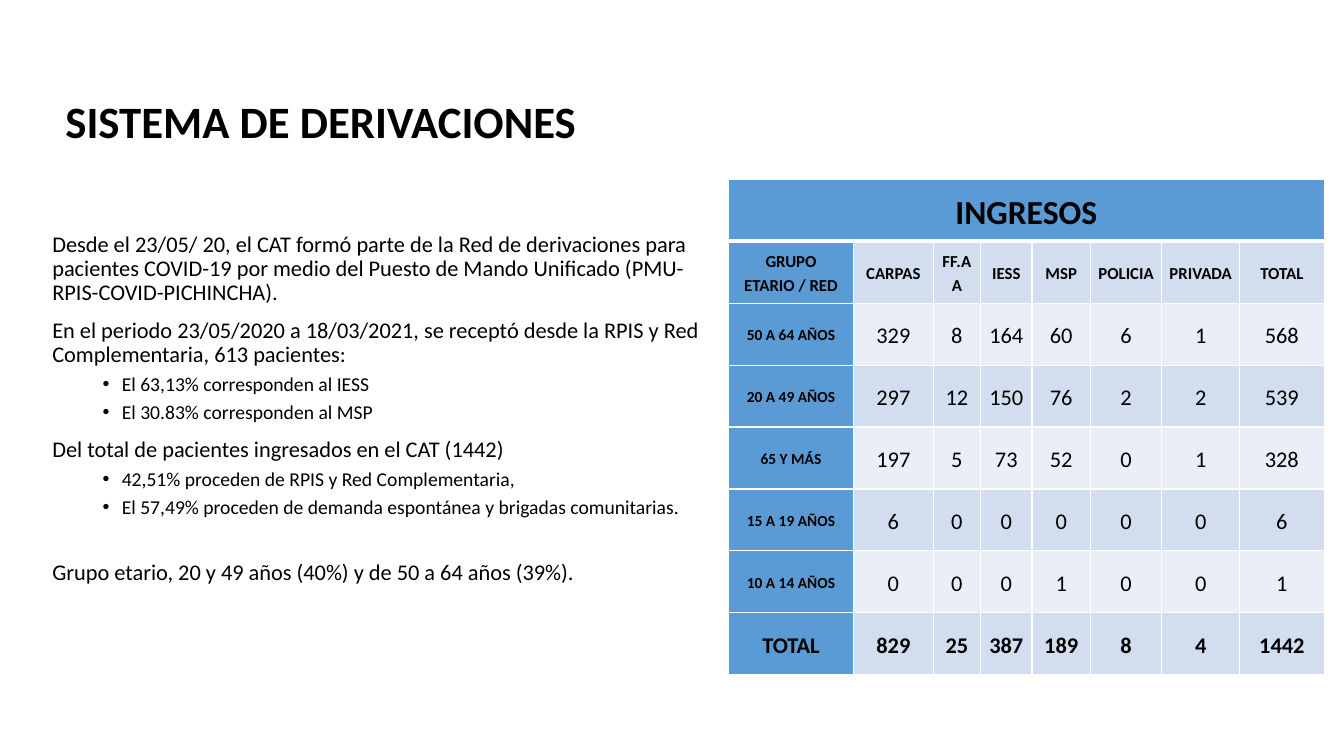
from lxml import etree
from pptx import Presentation
from pptx.dml.color import RGBColor
from pptx.enum.text import MSO_ANCHOR as ANCHOR, PP_ALIGN as ALIGN
from pptx.oxml.ns import qn
from pptx.util import Cm, Pt

BLACK = RGBColor(0x00, 0x00, 0x00)
BLUE = RGBColor(0x5B, 0x9B, 0xD5)
BAND_DARK = RGBColor(0xD2, 0xDE, 0xEF)
BAND_LIGHT = RGBColor(0xEA, 0xEF, 0xF7)
WHITE = RGBColor(0xFF, 0xFF, 0xFF)

TITLE = "SISTEMA DE DERIVACIONES"
BODY = [
    (0, "Desde el 23/05/ 20, el CAT formó parte de la Red de derivaciones para "
        "pacientes COVID-19 por medio del Puesto de Mando Unificado "
        "(PMU-RPIS-COVID-PICHINCHA)."),
    (0, "En el periodo 23/05/2020 a 18/03/2021, se receptó desde la RPIS y Red "
        "Complementaria, 613 pacientes:"),
    (1, "El 63,13% corresponden al IESS"),
    (1, "El 30.83% corresponden al MSP"),
    (0, "Del total de pacientes ingresados en el CAT (1442)"),
    (1, "42,51% proceden de RPIS y Red Complementaria,"),
    (1, "El 57,49% proceden de demanda espontánea y brigadas comunitarias."),
]
CLOSING = "Grupo etario, 20 y 49 años (40%) y de 50 a 64 años (39%)."
COL_WIDTHS = [3.15, 2.01, 1.19, 1.3, 1.47, 1.8, 1.96, 2.13]
ROW_HEIGHT = 1.56
ADMISSIONS = [
    ["INGRESOS"],
    ["GRUPO ETARIO / RED", "CARPAS", "FF.AA", "IESS", "MSP", "POLICIA", "PRIVADA", "TOTAL"],
    ["50 A 64 AÑOS", 329, 8, 164, 60, 6, 1, 568],
    ["20 A 49 AÑOS", 297, 12, 150, 76, 2, 2, 539],
    ["65 Y MÁS", 197, 5, 73, 52, 0, 1, 328],
    ["15 A 19 AÑOS", 6, 0, 0, 0, 0, 0, 6],
    ["10 A 14 AÑOS", 0, 0, 0, 1, 0, 0, 1],
    ["TOTAL", 829, 25, 387, 189, 8, 4, 1442],
]


def write(p, text, size=16, bold=False, align=ALIGN.LEFT, spacing=0.9, before=0):
    p.alignment, p.line_spacing, p.space_before = align, spacing, Pt(before)
    r = p.add_run()
    r.text = text
    r.font.name, r.font.size, r.font.bold = "Calibri", Pt(size), bold
    r.font.color.rgb = BLACK


def add_bullet(p):
    pPr = p._p.get_or_add_pPr()
    pPr.set("marL", str(Cm(1.75)))
    pPr.set("indent", str(Cm(-0.48)))
    etree.SubElement(pPr, qn("a:buFont"), typeface="Arial")
    etree.SubElement(pPr, qn("a:buChar"), char="•")


def add_borders(cell, bottom=1):
    tcPr = cell._tc.get_or_add_tcPr()
    for i, (side, width) in enumerate([("L", 1), ("R", 1), ("T", 1), ("B", bottom)]):
        ln = etree.Element(qn(f"a:ln{side}"), w=str(Pt(width)))
        fill = etree.SubElement(ln, qn("a:solidFill"))
        etree.SubElement(fill, qn("a:srgbClr"), val=str(WHITE))
        tcPr.insert(i, ln)


class Deck:
    """Builds the slide's text and table in one shared style."""

    def __init__(self):
        self.prs = Presentation()
        self.prs.slide_width, self.prs.slide_height = Cm(33.87), Cm(19.05)
        self.s = self.prs.slides.add_slide(self.prs.slide_layouts[6])

    def text_box(self, x, y, w, h, anchor=ANCHOR.TOP):
        tf = self.s.shapes.add_textbox(Cm(x), Cm(y), Cm(w), Cm(h)).text_frame
        tf.word_wrap, tf.vertical_anchor = True, anchor
        return tf

    def title(self, text, x, y, w, h):
        tf = self.text_box(x, y, w, h, ANCHOR.BOTTOM)
        write(tf.paragraphs[0], text, size=32, bold=True)

    def body(self, items, closing, x, y, w, h):
        tf = self.text_box(x, y, w, h)
        for i, (level, text) in enumerate(items):
            p = tf.add_paragraph() if i else tf.paragraphs[0]
            p.level = level
            write(p, text, size=14 if level else 16, before=5 if level else 10)
            if level:
                add_bullet(p)
        write(tf.add_paragraph(), closing, before=30.5)

    def table(self, rows, x, y):
        n_rows, n_cols = len(rows), len(COL_WIDTHS)
        frame = self.s.shapes.add_table(n_rows, n_cols, Cm(x), Cm(y),
                                        Cm(sum(COL_WIDTHS)), Cm(ROW_HEIGHT * n_rows))
        tbl = frame.table
        for col, width in zip(tbl.columns, COL_WIDTHS):
            col.width = Cm(width)
        for i, values in enumerate(rows):
            tbl.rows[i].height = Cm(ROW_HEIGHT)
            for j in range(n_cols):
                self.cell(tbl.cell(i, j), i, j, n_rows - 1)
            for j, value in enumerate(values):
                size = {0: 24, 1: 12, n_rows - 1: 16}.get(i, 16 if j else 11)
                bold = j == 0 or i in (1, n_rows - 1)
                write(tbl.cell(i, j).text_frame.paragraphs[0], str(value),
                      size=size, bold=bold, align=ALIGN.CENTER, spacing=1.15)
        tbl.cell(0, 0).merge(tbl.cell(0, n_cols - 1))

    def cell(self, cell, i, j, last):
        cell.vertical_anchor = ANCHOR.MIDDLE
        cell.margin_left = cell.margin_right = Cm(0.13)
        cell.margin_top = cell.margin_bottom = 0
        cell.fill.solid()
        band = BAND_DARK if i % 2 else BAND_LIGHT
        cell.fill.fore_color.rgb = BLUE if i == 0 or j == 0 else band
        add_borders(cell, bottom=1 if i else 3)


def main():
    deck = Deck()
    deck.title(TITLE, 1.4, 0.91, 16.23, 2.95)
    deck.table(ADMISSIONS, 18.36, 4.52)
    deck.body(BODY, CLOSING, 1.07, 5.74, 16.92, 10.44)
    deck.prs.save("out.pptx")


if __name__ == "__main__":
    main()
